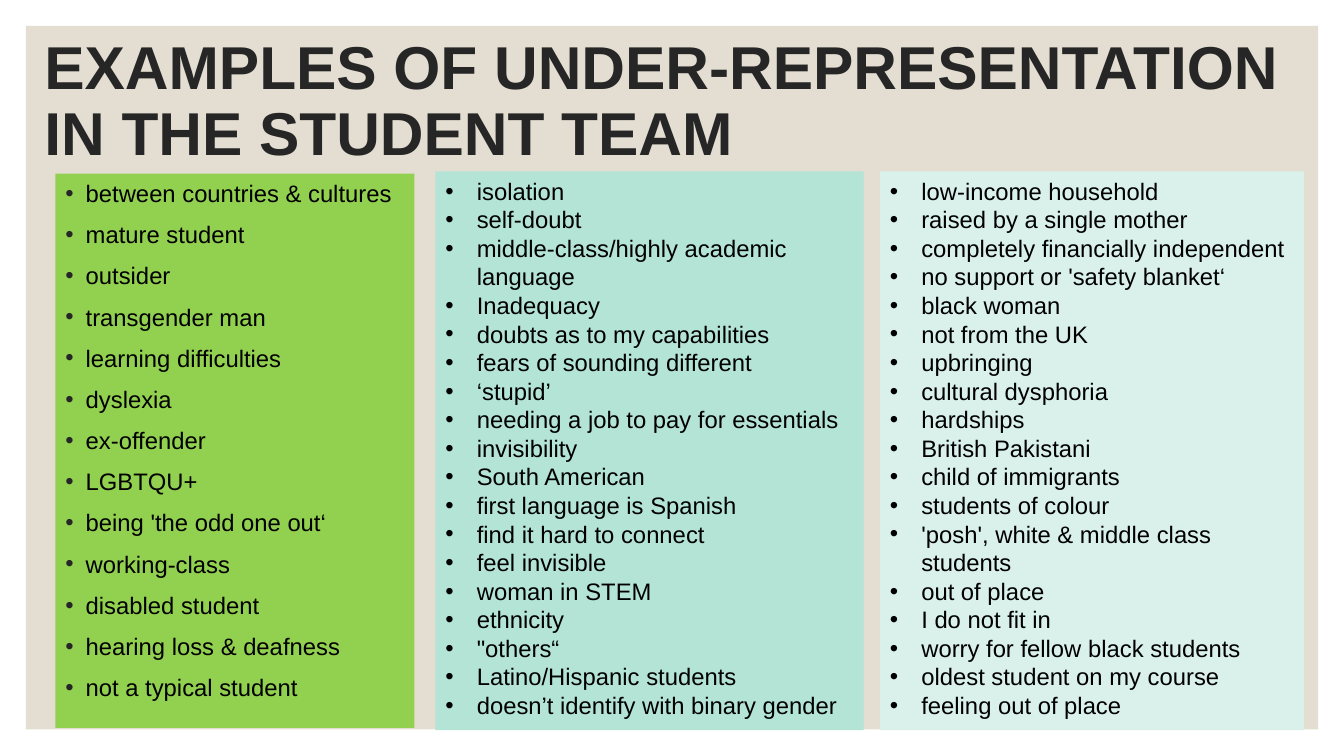
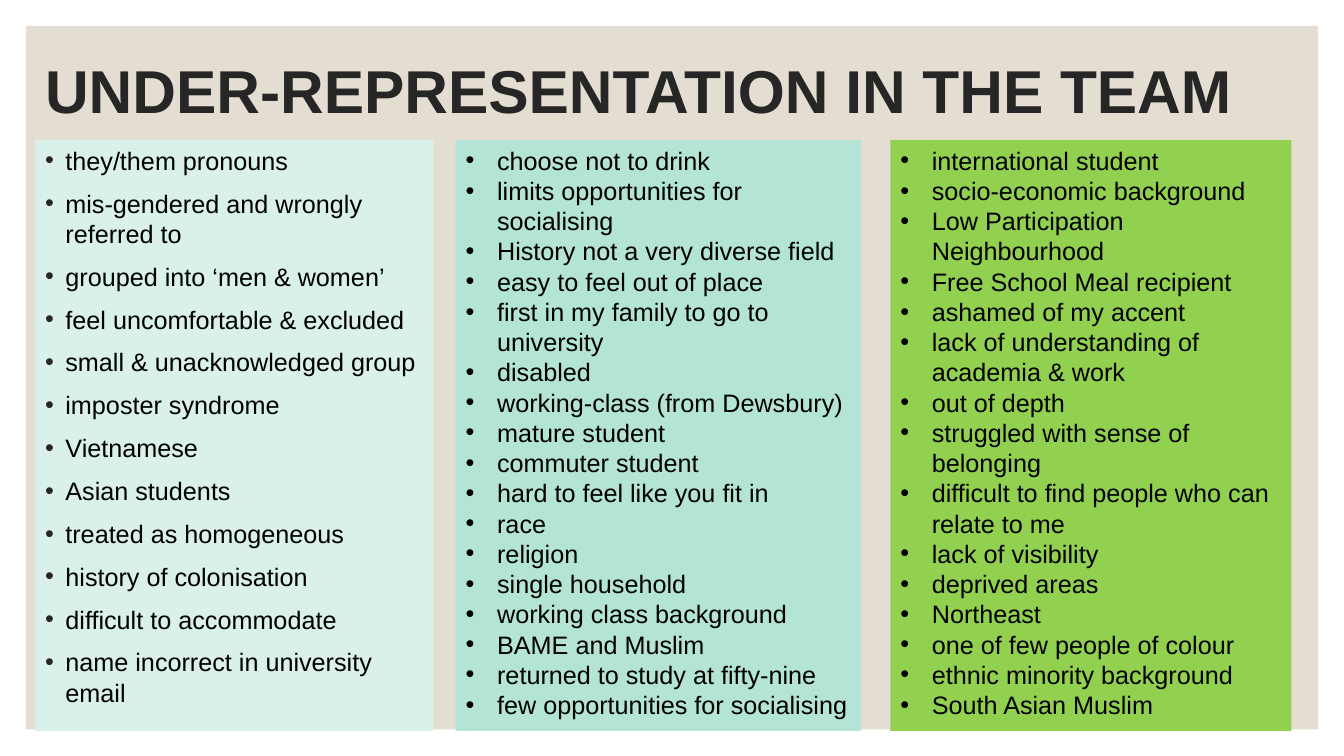
"""Build two slides listing examples of under-representation in the student team."""
from lxml import etree
from pptx import Presentation
from pptx.dml.color import RGBColor
from pptx.enum import shapes, text
from pptx.oxml import ns
from pptx.util import Pt

PX = 6350
FONT = "Arial"
INK = "262626"
BLACK = "000000"
SAND = "E3DED1"
LIME = "92D050"
MINT = "B3E4D6"
PALE = "D9F1EA"
BAND = (37, 37, 1846, 1005)


def paint(color_format, value):
    color_format.rgb = RGBColor.from_string(value)


def fill_list(box, items, size, indent, space, fill, bullet):
    box.fill.solid()
    paint(box.fill.fore_color, fill)
    frame = box.text_frame
    frame.word_wrap = True
    frame.text = "\n".join(items)
    for para in frame.paragraphs:
        para.space_before = Pt(space)
        properties = para._p.get_or_add_pPr()
        properties.set("marL", str(indent * PX))
        properties.set("indent", str(-indent * PX))
        color = etree.SubElement(properties, ns.qn("a:buClr"))
        etree.SubElement(color, ns.qn("a:srgbClr"), val=bullet)
        etree.SubElement(properties, ns.qn("a:buFont"), typeface=FONT)
        etree.SubElement(properties, ns.qn("a:buChar"), char="•")
        for span in para.runs:
            span.font.name = FONT
            span.font.size = Pt(size)
            paint(span.font.color, BLACK)


slides = [
    {
        "title": "EXAMPLES OF UNDER-REPRESENTATION IN THE STUDENT TEAM",
        "title_at": (49, 39, 1839, 216),
        "size": 17,
        "columns": [
            ((79, 248, 513, 792), LIME, [
                "between countries & cultures",
                "mature student",
                "outsider",
                "transgender man",
                "learning difficulties",
                "dyslexia",
                "ex-offender",
                "LGBTQU+",
                "being 'the odd one out‘",
                "working-class",
                "disabled student",
                "hearing loss & deafness",
                "not a typical student",
            ]),
            ((622, 245, 612, 798), MINT, [
                "isolation",
                "self-doubt",
                "middle-class/highly academic language",
                "Inadequacy",
                "doubts as to my capabilities",
                "fears of sounding different",
                "‘stupid’",
                "needing a job to pay for essentials",
                "invisibility",
                "South American",
                "first language is Spanish",
                "find it hard to connect",
                "feel invisible",
                "woman in STEM",
                "ethnicity",
                '"others“',
                "Latino/Hispanic students",
                "doesn’t identify with binary gender",
            ]),
            ((1257, 245, 606, 798), PALE, [
                "low-income household",
                "raised by a single mother",
                "completely financially independent",
                "no support or 'safety blanket‘",
                "black woman",
                "not from the UK",
                "upbringing",
                "cultural dysphoria",
                "hardships",
                "British Pakistani",
                "child of immigrants",
                "students of colour",
                "'posh', white & middle class students",
                "out of place",
                "I do not fit in",
                "worry for fellow black students",
                "oldest student on my course",
                "feeling out of place",
            ]),
        ],
    },
    {
        "title": "UNDER-REPRESENTATION IN THE TEAM",
        "title_at": (50, 26, 1836, 216),
        "size": 18,
        "columns": [
            ((50, 200, 569, 844), PALE, [
                "they/them pronouns",
                "mis-gendered and wrongly referred to",
                "grouped into ‘men & women’",
                "feel uncomfortable & excluded",
                "small & unacknowledged group",
                "imposter syndrome",
                "Vietnamese",
                "Asian students",
                "treated as homogeneous",
                "history of colonisation",
                "difficult to accommodate",
                "name incorrect in university email",
            ]),
            ((651, 200, 579, 844), MINT, [
                "choose not to drink",
                "limits opportunities for socialising",
                "History not a very diverse field",
                "easy to feel out of place",
                "first in my family to go to university",
                "disabled",
                "working-class (from Dewsbury)",
                "mature student",
                "commuter student",
                "hard to feel like you fit in",
                "race",
                "religion",
                "single household",
                "working class background",
                "BAME and Muslim",
                "returned to study at fifty-nine",
                "few opportunities for socialising",
            ]),
            ((1272, 200, 573, 844), LIME, [
                "international student",
                "socio-economic background",
                "Low Participation Neighbourhood",
                "Free School Meal recipient",
                "ashamed of my accent",
                "lack of understanding of academia & work",
                "out of depth",
                "struggled with sense of belonging",
                "difficult to find people who can relate to me",
                "lack of visibility",
                "deprived areas",
                "Northeast",
                "one of few people of colour",
                "ethnic minority background",
                "South Asian Muslim",
            ]),
        ],
    },
]

deck = Presentation()
deck.slide_width, deck.slide_height = 1920 * PX, 1080 * PX
layout = deck.slide_layouts.get_by_name("Title and Content")

for content in slides:
    page = deck.slides.add_slide(layout)
    band = page.shapes.add_shape(
        shapes.MSO_SHAPE.RECTANGLE, *[value * PX for value in BAND])
    band.shadow.inherit = False
    band.fill.solid()
    paint(band.fill.fore_color, SAND)
    band.line.fill.background()
    page.shapes.element.insert(2, band.element)

    title = page.shapes.title
    title.left, title.top, title.width, title.height = [
        value * PX for value in content["title_at"]]
    frame = title.text_frame
    frame.text = content["title"]
    frame.word_wrap = True
    frame.auto_size = text.MSO_AUTO_SIZE.NONE
    frame.vertical_anchor = text.MSO_ANCHOR.MIDDLE
    para = frame.paragraphs[0]
    para.alignment = text.PP_ALIGN.LEFT
    para.line_spacing = 0.9
    span = para.runs[0]
    span.font.name = FONT
    span.font.size = Pt(43.2)
    span.font.bold = True
    paint(span.font.color, INK)

    (place, fill, items), *others = content["columns"]
    body = page.placeholders[1]
    body.left, body.top, body.width, body.height = [value * PX for value in place]
    body.text_frame.auto_size = text.MSO_AUTO_SIZE.NONE
    fill_list(body, items, content["size"], 29, 9, fill, INK)

    for place, fill, items in others:
        box = page.shapes.add_textbox(*[value * PX for value in place])
        box.text_frame.auto_size = text.MSO_AUTO_SIZE.SHAPE_TO_FIT_TEXT
        fill_list(box, items, content["size"], 45, 0, fill, BLACK)

deck.save("out.pptx")
